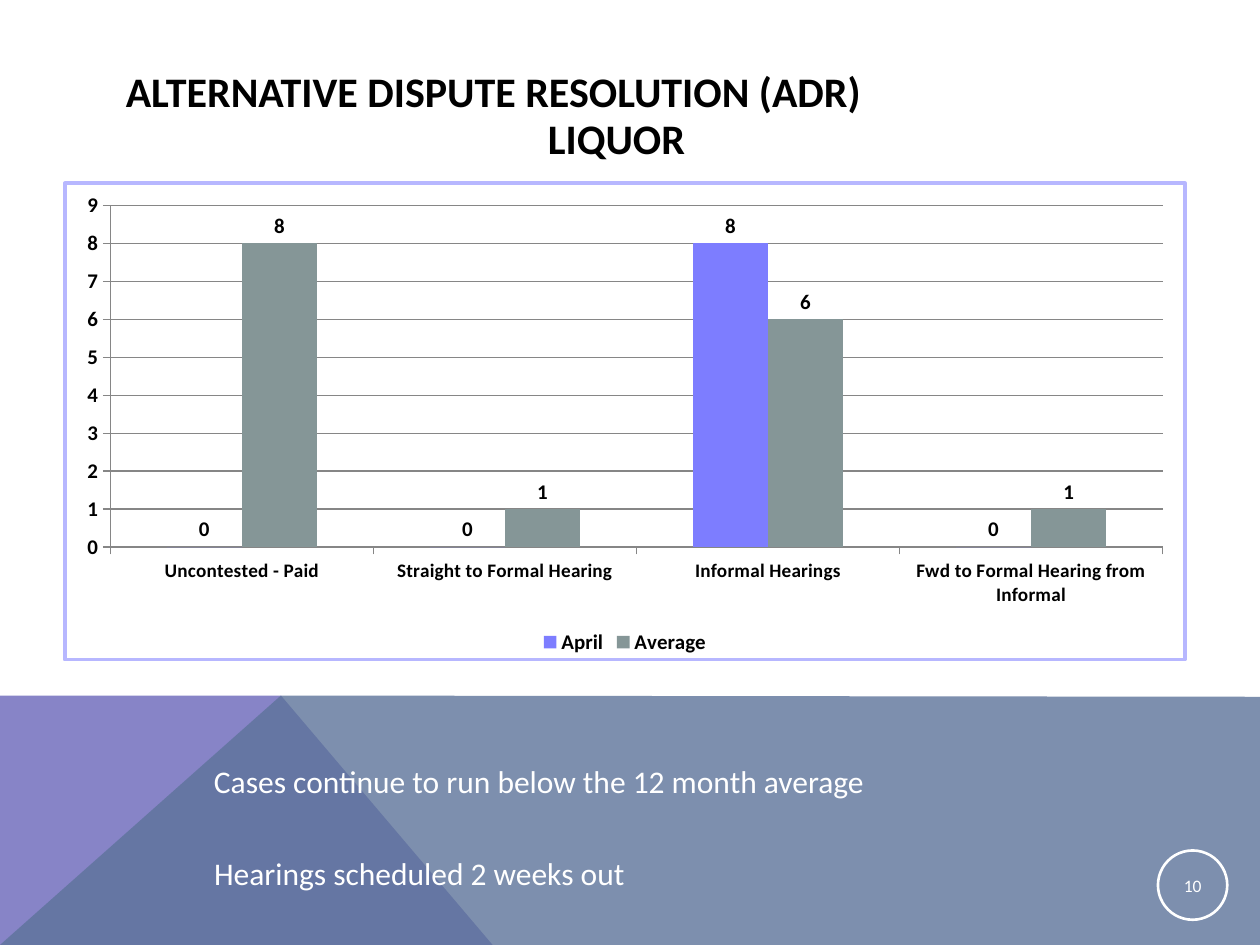
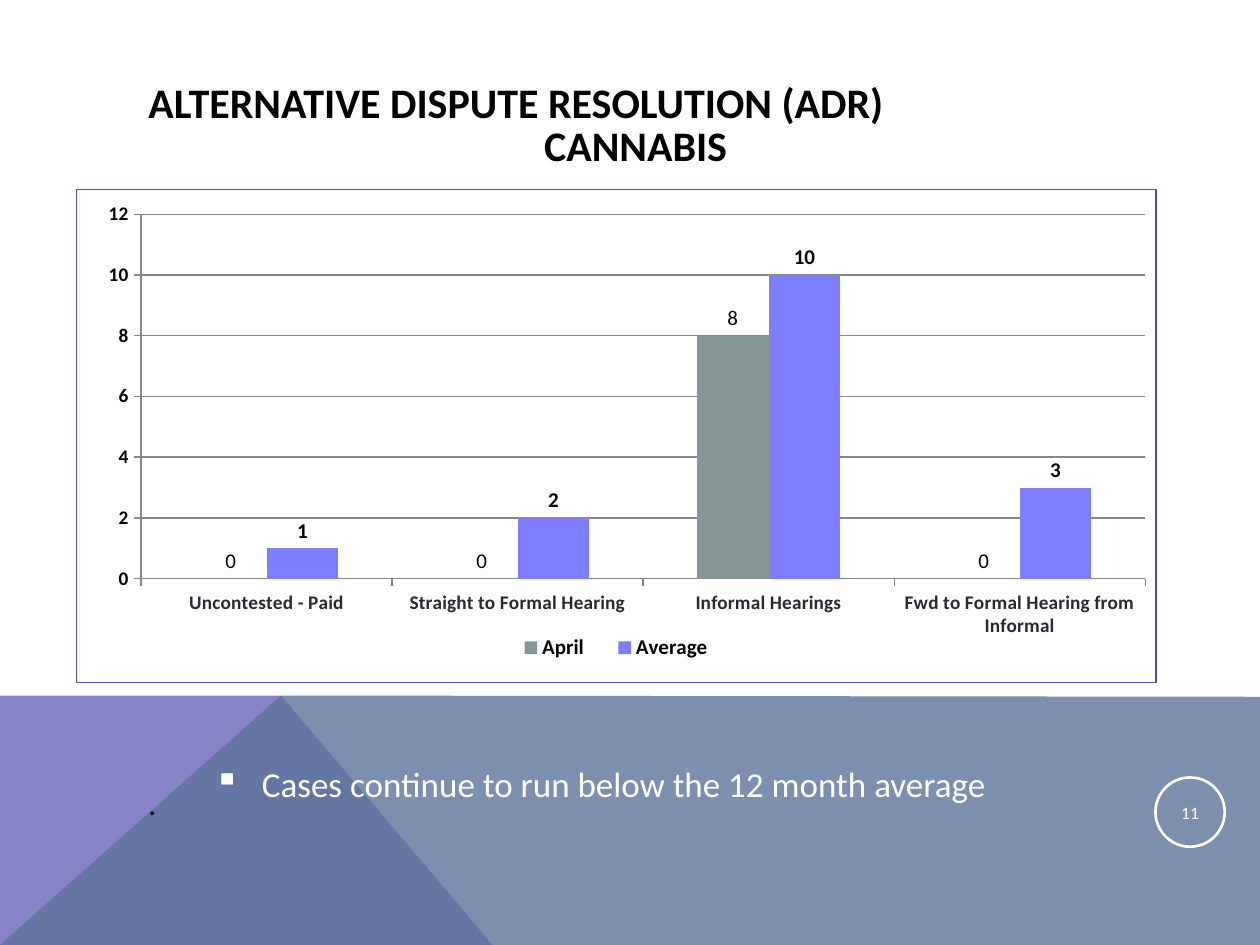
from dataclasses import dataclass
from lxml.etree import SubElement
from pptx import Presentation
from pptx.chart.data import CategoryChartData
from pptx.dml.color import RGBColor
from pptx.enum.chart import XL_CHART_TYPE, XL_LABEL_POSITION, XL_LEGEND_POSITION, XL_TICK_MARK
from pptx.enum.shapes import MSO_SHAPE
from pptx.enum.text import MSO_ANCHOR, PP_ALIGN
from pptx.oxml.ns import qn
from pptx.util import Inches, Pt


@dataclass(frozen=True)
class Theme:
    face: str = "Calibri"
    black: str = "000000"
    white: str = "FFFFFF"
    ink: str = "292834"
    grid: str = "868686"
    violet: str = "8784C7"
    slate: str = "5D739A"
    blue: str = "7D7DFF"
    gray: str = "859697"
    pale: str = "B7B7FF"
    indigo: str = "524EAB"
    head: int = 24
    large: int = 20
    body: int = 18
    label: int = 12
    axis: int = 11
    small: int = 10


T = Theme()
GROUPS = ["Uncontested - Paid", "Straight to Formal Hearing",
          "Informal Hearings", "Fwd to Formal Hearing from Informal"]
TITLE = "ALTERNATIVE DISPUTE RESOLUTION (ADR)"
TREND = "Cases continue to run below the 12 month average"


def apply(target, **values):
    for name, value in values.items():
        setattr(target, name, value)


def style(font, size, color=T.black, bold=False):
    apply(font, name=T.face, size=Pt(size), bold=bold)
    font.color.rgb = RGBColor.from_string(color)


def paint(fill, color):
    fill.solid()
    fill.fore_color.rgb = RGBColor.from_string(color)


def stroke(line, color, width):
    line.color.rgb = RGBColor.from_string(color)
    line.width = Pt(width)


def add_text(slide, box, words, size, color=T.black, bold=False, wrap=True,
             align=PP_ALIGN.LEFT, anchor=MSO_ANCHOR.TOP, base=0.05, bullet=None):
    frame = slide.shapes.add_textbox(*map(Inches, box)).text_frame
    apply(frame, word_wrap=wrap, vertical_anchor=anchor, margin_bottom=Inches(base))
    para = frame.paragraphs[0]
    apply(para, text=words, alignment=align)
    if bullet:
        props = para._p.get_or_add_pPr()
        indent = Inches(0.38)
        props.set("marL", str(indent))
        props.set("indent", str(-indent))
        SubElement(props, qn("a:buChar")).set("char", bullet)
    style(para.runs[0].font, size, color, bold)


def add_title(slide, left, top, base):
    add_text(slide, (left, top, 8.22, 0.6), TITLE, T.head, bold=True,
             anchor=MSO_ANCHOR.MIDDLE, base=base)


def add_facet(slide, points, color, alpha=100):
    start, *rest = [tuple(map(Inches, point)) for point in points]
    pen = slide.shapes.build_freeform(*start)
    pen.add_line_segments(rest, close=True)
    shape = pen.convert_to_shape()
    shape.shadow.inherit = False
    paint(shape.fill, color)
    shape.line.fill.background()
    if alpha < 100:
        tint = shape.fill._xPr.find(".//" + qn("a:srgbClr"))
        SubElement(tint, qn("a:alpha")).set("val", str(alpha * 1000))


def add_band(slide):
    low, peak = (0, 7.5), (2.23, 5.52)
    add_facet(slide, [low, (0, 5.52), peak, (3.91, 7.5)], T.violet)
    add_facet(slide, [low, peak, (10, 5.53), (10, 7.5)], T.slate, 80)


def add_badge(slide, left, top, number):
    ring = slide.shapes.add_shape(MSO_SHAPE.OVAL, *map(Inches, (left, top, 0.55, 0.55)))
    ring.shadow.inherit = False
    ring.fill.background()
    stroke(ring.line, T.white, 1.5)
    frame = ring.text_frame
    sides = ("left", "right", "top", "bottom")
    apply(frame, vertical_anchor=MSO_ANCHOR.MIDDLE,
          **{f"margin_{side}": Inches(0.01) for side in sides})
    para = frame.paragraphs[0]
    apply(para, text=str(number), alignment=PP_ALIGN.CENTER)
    style(para.runs[0].font, T.small, T.white)


def set_border(chart, color, width):
    body = chart.element.find(qn("c:chart"))
    props = SubElement(chart.element, qn("c:spPr"))
    body.addnext(props)
    line = SubElement(props, qn("a:ln"))
    line.set("w", str(Pt(width)))
    fill = SubElement(line, qn("a:solidFill"))
    SubElement(fill, qn("a:srgbClr")).set("val", color)


def set_place(chart, tag, index, area, inner=False):
    part = chart.element.find(".//" + qn(tag))
    for old in part.findall(qn("c:layout")):
        part.remove(old)
    layout = SubElement(part, qn("c:layout"))
    part.insert(index, layout)
    manual = SubElement(layout, qn("c:manualLayout"))
    values = {"xMode": "edge", "yMode": "edge", **dict(zip("xywh", area))}
    if inner:
        values = {"layoutTarget": "inner", **values}
    for name, value in values.items():
        SubElement(manual, qn("c:" + name)).set("val", str(value))


def add_chart(slide, box, series, top, step, sizes, ink, border):
    data = CategoryChartData()
    data.categories = GROUPS
    for name, values, _, _ in series:
        data.add_series(name, values)
    chart = slide.shapes.add_chart(
        XL_CHART_TYPE.COLUMN_CLUSTERED, *map(Inches, box), data).chart
    style(chart.font, T.small)
    apply(chart, has_title=False, has_legend=True)
    apply(chart.legend, position=XL_LEGEND_POSITION.BOTTOM, include_in_layout=False)
    style(chart.legend.font, T.label, bold=True)
    set_border(chart, *border)

    across, up = chart.category_axis, chart.value_axis
    for axis, size, color in zip((across, up), sizes, (ink, T.black)):
        apply(axis, major_tick_mark=XL_TICK_MARK.OUTSIDE,
              minor_tick_mark=XL_TICK_MARK.NONE)
        style(axis.tick_labels.font, size, color, True)
        stroke(axis.format.line, T.grid, 0.75)
    apply(up, minimum_scale=0, maximum_scale=top, major_unit=step,
          has_major_gridlines=True)
    stroke(up.major_gridlines.format.line, T.grid, 0.75)

    plot = chart.plots[0]
    apply(plot, gap_width=150, overlap=0, vary_by_categories=False)
    for bars, (_, _, color, bold) in zip(plot.series, series):
        paint(bars.format.fill, color)
        labels = bars.data_labels
        apply(labels, show_value=True, number_format="0",
              number_format_is_linked=False, position=XL_LABEL_POSITION.OUTSIDE_END)
        style(labels.font, T.label, bold=bold)
    return chart


def add_liquor(slide):
    add_title(slide, 0.9, 0.4, 0.01)
    add_text(slide, (4.25, 0.84, 1.83, 0.5), "LIQUOR", T.head, bold=True)
    add_badge(slide, 9.19, 6.75, 10)
    add_chart(slide, (0.5, 1.44, 8.92, 3.81),
              [("April", (0, 0, 8, 0), T.blue, True),
               ("Average", (8, 1, 6, 1), T.gray, True)],
              9, 1, (T.axis, T.label), T.black, (T.pale, 2.25))
    add_text(slide, (1.6, 6.73, 6.75, 0.4), "Hearings scheduled 2 weeks out",
             T.body, T.white)
    add_text(slide, (1.6, 6, 5.46, 0.4), TREND, T.body, T.white, wrap=False)


def add_cannabis(slide):
    add_title(slide, 1.08, 0.69, 0.42)
    add_text(slide, (1.08, 6.17, 0.27, 0.4), ".", T.body, wrap=False)
    add_text(slide, (3.42, 0.9, 3.25, 0.5), "CANNABIS", T.head, bold=True,
             align=PP_ALIGN.CENTER)
    add_badge(slide, 9.17, 6.17, 11)
    chart = add_chart(slide, (0.6, 1.5, 8.58, 3.92),
                      [("April", (0, 0, 8, 0), T.gray, False),
                       ("Average", (1, 2, 10, 3), T.blue, True)],
                      12, 2, (T.axis, T.axis), T.ink, (T.indigo, 0.75))
    set_place(chart, "c:plotArea", 0, (0.06, 0.05, 0.93, 0.74), True)
    set_place(chart, "c:legend", 1, (0.39, 0.9, 0.22, 0.06))
    add_text(slide, (1.6, 6, 6.42, 0.44), TREND, T.large, T.white,
             wrap=False, bullet="▪")


def main():
    deck = Presentation()
    apply(deck, slide_width=Inches(10), slide_height=Inches(7.5))
    for build in (add_liquor, add_cannabis):
        slide = deck.slides.add_slide(deck.slide_layouts[6])
        add_band(slide)
        build(slide)
    deck.save("out.pptx")


if __name__ == "__main__":
    main()
